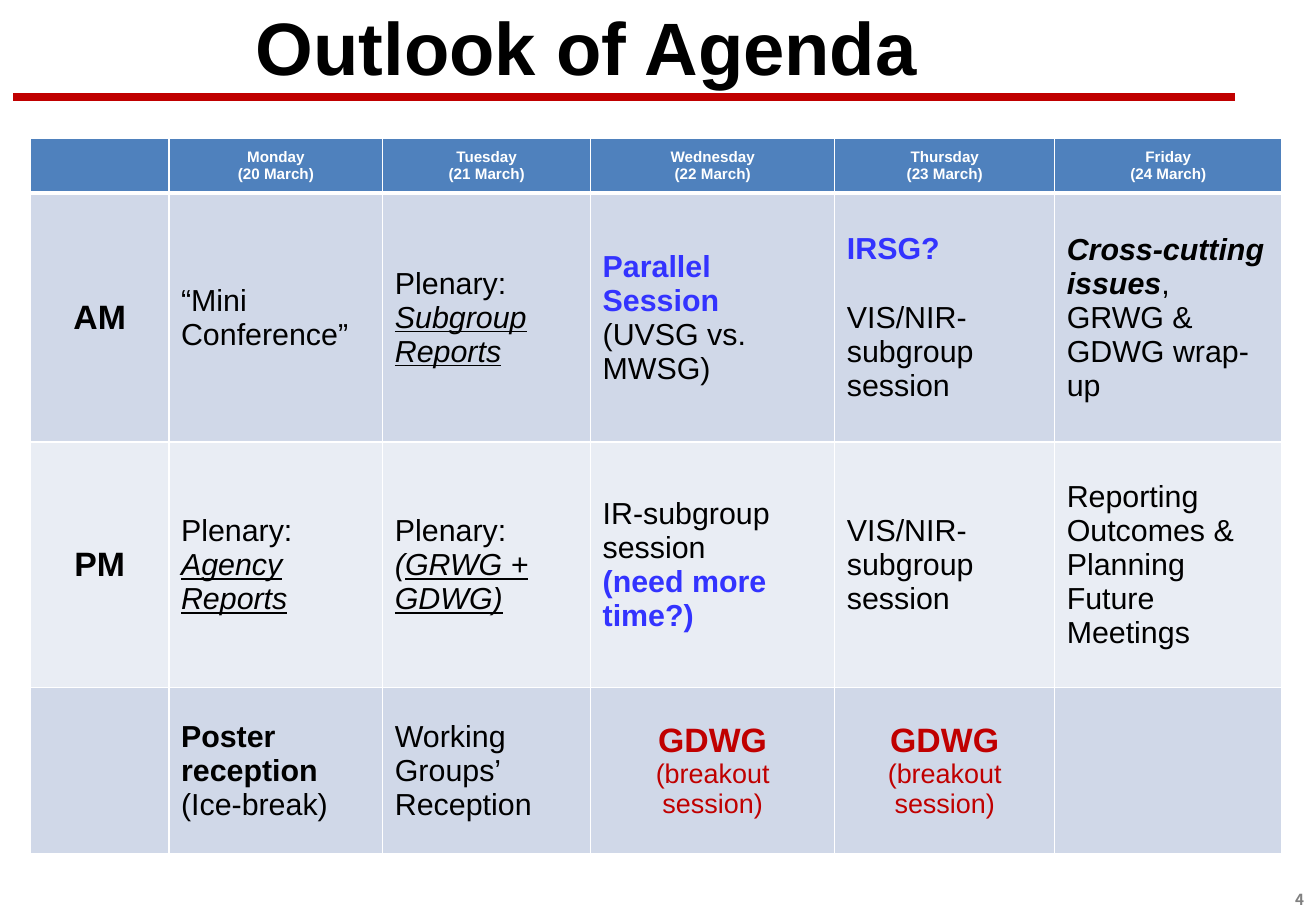
from dataclasses import dataclass

from lxml import etree
from pptx import Presentation
from pptx.dml.color import RGBColor
from pptx.enum.shapes import MSO_CONNECTOR
from pptx.enum.text import MSO_ANCHOR, MSO_AUTO_SIZE, PP_ALIGN
from pptx.oxml.ns import qn
from pptx.util import Inches, Pt

STRAIGHT = MSO_CONNECTOR.STRAIGHT
MIDDLE = MSO_ANCHOR.MIDDLE
NO_AUTOFIT = MSO_AUTO_SIZE.NONE
LEFT, CENTER, RIGHT = PP_ALIGN.LEFT, PP_ALIGN.CENTER, PP_ALIGN.RIGHT
SLIDE_W, SLIDE_H = Inches(10.83), Inches(7.5)


@dataclass(frozen=True)
class Theme:
    font: str = "Arial"
    number_font: str = "Noto Sans CJK KR"
    ink: str = "000000"
    white: str = "FFFFFF"
    blue: str = "3333FF"
    red: str = "C00000"
    grey: str = "808080"
    header: str = "4F81BD"
    bands: tuple = ("D0D8E8", "E9EDF4")
    title_size: float = 44
    label_size: float = 20
    body_size: float = 18
    detail_size: float = 16
    small_size: float = 9
    rule_width: float = 4.5
    border: float = 1
    header_border: float = 3


THEME = Theme()
COLUMN_SHARES = (10.53, 16.25, 15.79, 18.56, 16.71, 17.27)
ROW_SHARES = (6, 27.33, 26.93, 18.27)


@dataclass(frozen=True)
class Line:
    phrases: tuple
    size: float = THEME.body_size
    color: str = THEME.ink
    bold: bool = False
    align: int = LEFT
    after: float = 0


@dataclass(frozen=True)
class Phrase:
    text: str
    bold: bool = None
    italic: bool = None
    underline: bool = None
    color: str = None


def line(*phrases, **style):
    return Line(tuple(Phrase(p) if isinstance(p, str) else p for p in phrases), **style)


def day(name, date):
    return [line(text, size=THEME.small_size, color=THEME.white, bold=True, align=CENTER)
            for text in (name, f"({date} March)")]


def half_day(name):
    return [line(name, size=THEME.label_size, bold=True, align=CENTER)]


def breakout(*details):
    heading = line("GDWG", size=THEME.label_size, color=THEME.red, bold=True, align=CENTER)
    return [heading] + [line(text, size=THEME.detail_size, color=THEME.red, align=CENTER)
                        for text in details]


def stressed(text):
    return Phrase(text, italic=True, underline=True)


AGENDA = [
    [[], day("Monday", 20), day("Tuesday", 21), day("Wednesday", 22),
     day("Thursday", 23), day("Friday", 24)],
    [half_day("AM"),
     [line("“Mini Conference”")],
     [line("Plenary: ", stressed("Subgroup Reports"))],
     [line(Phrase("Parallel Session", bold=True, color=THEME.blue), " (UVSG vs. MWSG)")],
     [line("IRSG?", color=THEME.blue, bold=True, after=20.5),
      line("VIS/NIR-subgroup session")],
     [line(Phrase("Cross-cutting issues", bold=True, italic=True), ", GRWG & GDWG wrap-up")]],
    [half_day("PM"),
     [line("Plenary: ", stressed("Agency Reports"))],
     [line("Plenary: ", Phrase("(", italic=True), stressed("GRWG + GDWG)"))],
     [line("IR-subgroup session"),
      line("(need more time?)", color=THEME.blue, bold=True)],
     [line("VIS/NIR-subgroup session")],
     [line("Reporting Outcomes & Planning Future Meetings")]],
    [[],
     [line("Poster reception", bold=True), line("(Ice-break)")],
     [line("Working Groups’ Reception")],
     breakout("(breakout", "session)"),
     breakout("(breakout session)"),
     []],
]


def across(share):
    return round(SLIDE_W * share / 100)


def down(share):
    return round(SLIDE_H * share / 100)


def area(left, top, width, height):
    return across(left), down(top), across(width), down(height)


def set_font(font, size, color, bold, name=THEME.font):
    font.name = name
    font.size = Pt(size)
    font.bold = bold
    font.color.rgb = RGBColor.from_string(color)


def write_lines(frame, lines, font_name=THEME.font):
    for index, content in enumerate(lines):
        paragraph = frame.add_paragraph() if index else frame.paragraphs[0]
        paragraph.alignment = content.align
        paragraph.space_before = Pt(0)
        paragraph.space_after = Pt(content.after)
        set_font(paragraph.font, content.size, content.color, content.bold, font_name)
        for phrase in content.phrases:
            run = paragraph.add_run()
            run.text = phrase.text
            run.font.bold = phrase.bold
            run.font.italic = phrase.italic
            run.font.underline = phrase.underline
            if phrase.color:
                run.font.color.rgb = RGBColor.from_string(phrase.color)


def add_title(slide, text):
    title = slide.shapes.title
    title.left, title.top, title.width, title.height = area(1.48, 1.07, 86.24, 8)
    frame = title.text_frame
    frame.auto_size = NO_AUTOFIT
    frame.vertical_anchor = MIDDLE
    write_lines(frame, [line(text, size=THEME.title_size, bold=True, align=CENTER)])


def add_rule(slide):
    height = down(10.67)
    rule = slide.shapes.add_connector(STRAIGHT, across(1.02), height, across(93.81), height)
    rule.line.color.rgb = RGBColor.from_string(THEME.red)
    rule.line.width = Pt(THEME.rule_width)
    etree.SubElement(rule._element.spPr, qn("a:effectLst"))


def add_page_number(slide, number):
    frame = slide.shapes.add_textbox(*area(91.41, 97.07, 8.59, 3.33)).text_frame
    frame.word_wrap = True
    frame.vertical_anchor = MIDDLE
    write_lines(frame, [line(number, size=THEME.small_size, color=THEME.grey,
                             bold=True, align=RIGHT)], THEME.number_font)


def set_borders(cell, top, bottom):
    properties = cell._tc.get_or_add_tcPr()
    widths = {"lnL": THEME.border, "lnR": THEME.border, "lnT": top, "lnB": bottom}
    for index, (side, width) in enumerate(widths.items()):
        border = etree.Element(qn(f"a:{side}"), w=str(Pt(width)))
        fill = etree.SubElement(border, qn("a:solidFill"))
        etree.SubElement(fill, qn("a:srgbClr"), val=THEME.white)
        properties.insert(index, border)


def add_agenda(slide, agenda):
    table = slide.shapes.add_table(
        len(ROW_SHARES), len(COLUMN_SHARES),
        *area(2.31, 15.2, sum(COLUMN_SHARES), sum(ROW_SHARES))).table
    for column, share in zip(table.columns, COLUMN_SHARES):
        column.width = across(share)
    for index, (row, share, entries) in enumerate(zip(table.rows, ROW_SHARES, agenda)):
        row.height = down(share)
        background = THEME.bands[(index - 1) % 2] if index else THEME.header
        top = THEME.header_border if index == 1 else THEME.border
        bottom = THEME.border if index else THEME.header_border
        for cell, entry in zip(row.cells, entries):
            cell.fill.solid()
            cell.fill.fore_color.rgb = RGBColor.from_string(background)
            cell.vertical_anchor = MIDDLE
            set_borders(cell, top, bottom)
            write_lines(cell.text_frame, entry)


def main():
    deck = Presentation()
    deck.slide_width, deck.slide_height = SLIDE_W, SLIDE_H
    slide = deck.slides.add_slide(deck.slide_layouts[5])
    add_rule(slide)
    add_page_number(slide, "4")
    add_title(slide, "Outlook of Agenda")
    add_agenda(slide, AGENDA)
    deck.save("out.pptx")


if __name__ == "__main__":
    main()
